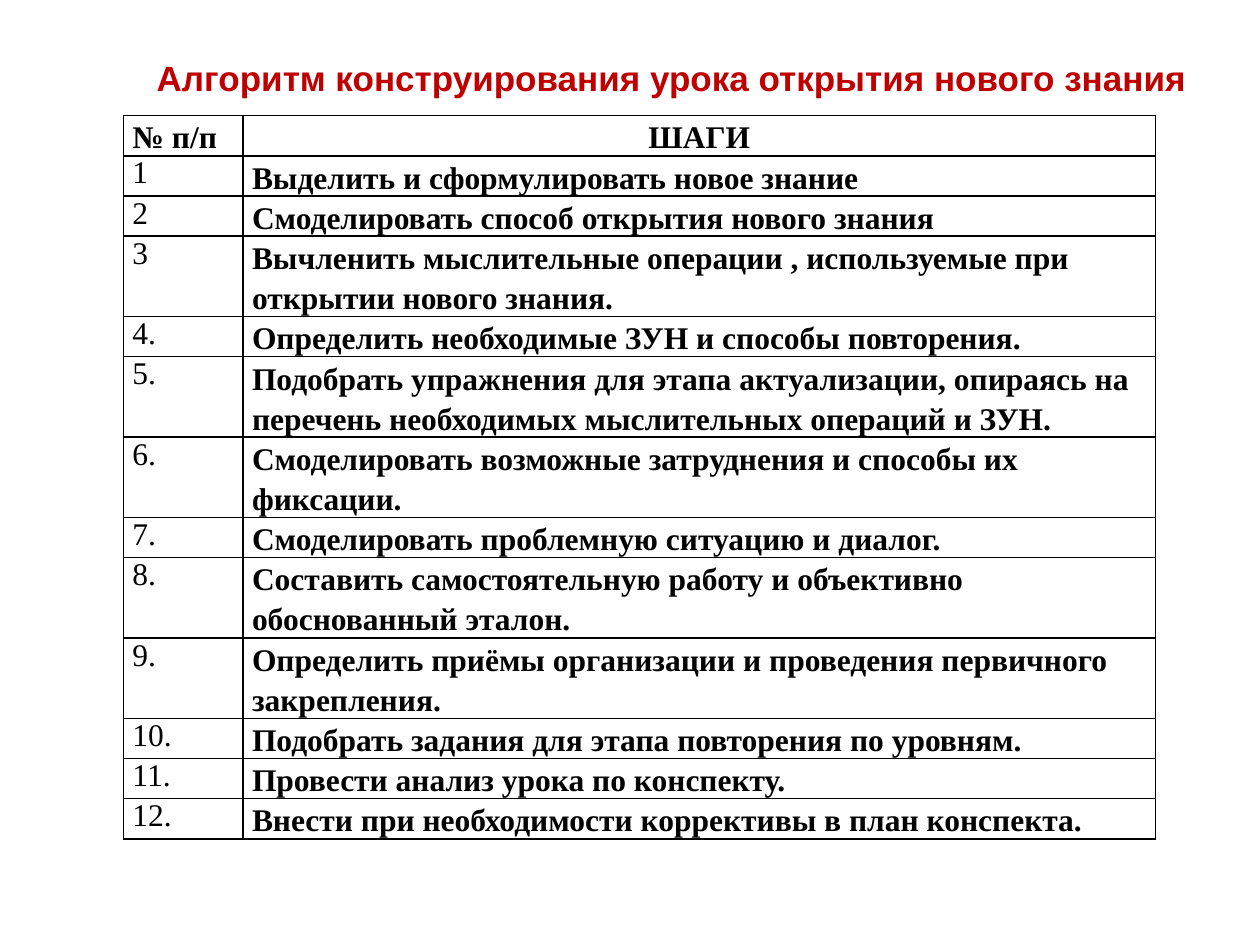
from typing import NamedTuple

from lxml import etree
from pptx import Presentation
from pptx import util as u
from pptx.dml.color import RGBColor
from pptx.enum import text
from pptx.oxml import ns

COLORS = {"title": "C00000", "ink": "000000"}
LINE_HEIGHT = 0.81
COLUMN_WIDTHS = (2.41, 18.39)
HANGING_INDENT = u.Cm(0.97)


class Step(NamedTuple):
    number: str
    action: str
    lines: int = 1


STEPS = [
    Step("1", "Выделить и сформулировать новое знание"),
    Step("2", "Смоделировать способ открытия нового знания"),
    Step("3", "Вычленить мыслительные операции , используемые при открытии нового знания.", 2),
    Step("4.", "Определить необходимые ЗУН и способы повторения."),
    Step("5.", "Подобрать упражнения для этапа актуализации, опираясь на перечень "
         "необходимых мыслительных операций и ЗУН.", 2),
    Step("6.", "Смоделировать возможные затруднения и способы их фиксации.", 2),
    Step("7.", "Смоделировать проблемную ситуацию и диалог."),
    Step("8.", "Составить самостоятельную работу и объективно обоснованный эталон.", 2),
    Step("9.", "Определить приёмы организации и проведения первичного закрепления.", 2),
    Step("10.", "Подобрать задания для этапа повторения по уровням."),
    Step("11.", "Провести анализ урока по конспекту."),
    Step("12.", "Внести при необходимости коррективы в план конспекта."),
]


def write_text(frame, content: str, *, font: str = "Times New Roman", size: float = 18,
               color: str = "ink", bold: bool = True, centered: bool = False,
               line_spacing: float = 1.0, hanging: bool = False) -> None:
    paragraph = frame.paragraphs[0]
    paragraph.alignment = text.PP_ALIGN.CENTER if centered else text.PP_ALIGN.LEFT
    paragraph.line_spacing = line_spacing
    if hanging:
        properties = paragraph._p.get_or_add_pPr()
        properties.set("marL", str(HANGING_INDENT))
        properties.set("indent", str(-HANGING_INDENT))
    run = paragraph.add_run()
    run.text = content
    run.font.name = font
    run.font.size = u.Pt(size)
    run.font.bold = bold
    run.font.color.rgb = RGBColor.from_string(COLORS[color])


def format_cell(cell) -> None:
    """Set margins, a 1 pt border on every side and no fill."""
    cell.margin_left = cell.margin_right = u.Cm(0.18)
    cell.margin_top = cell.margin_bottom = 0
    properties = cell._tc.get_or_add_tcPr()
    for side in ("a:lnL", "a:lnR", "a:lnT", "a:lnB"):
        line = etree.SubElement(properties, ns.qn(side), w=str(u.Pt(1)))
        fill = etree.SubElement(line, ns.qn("a:solidFill"))
        etree.SubElement(fill, ns.qn("a:srgbClr"), val=COLORS["ink"])
    cell.fill.background()


def add_title(slide) -> None:
    box = slide.shapes.add_textbox(u.Cm(2.49), u.Cm(1.32), u.Cm(22.1), u.Cm(1.58))
    frame = box.text_frame
    frame.word_wrap = True
    frame.vertical_anchor = text.MSO_ANCHOR.BOTTOM
    frame.margin_top = 0
    frame.margin_bottom = u.Cm(0.99)
    write_text(frame, "Алгоритм конструирования урока открытия нового знания",
               font="Arial", size=20, color="title", centered=True)


def add_steps_table(slide, steps: list[Step]) -> None:
    rows = [Step("№ п/п", "ШАГИ"), *steps]
    height = LINE_HEIGHT * sum(row.lines for row in rows)
    table = slide.shapes.add_table(len(rows), 2, u.Cm(2.49), u.Cm(2.33),
                                   u.Cm(sum(COLUMN_WIDTHS)), u.Cm(height)).table
    table.first_row = table.horz_banding = False
    for column, width in zip(table.columns, COLUMN_WIDTHS):
        column.width = u.Cm(width)
    for index, row in enumerate(rows):
        table.rows[index].height = u.Cm(LINE_HEIGHT * row.lines)
        number_cell, action_cell = table.cell(index, 0), table.cell(index, 1)
        format_cell(number_cell)
        format_cell(action_cell)
        header = index == 0
        write_text(number_cell.text_frame, row.number, bold=header, hanging=not header,
                   line_spacing=1.15 if header else 1.0)
        write_text(action_cell.text_frame, row.action, centered=header, line_spacing=1.15)


def main() -> None:
    presentation = Presentation()
    presentation.slide_width = u.Cm(25.4)
    presentation.slide_height = u.Cm(19.05)
    slide = presentation.slides.add_slide(presentation.slide_layouts[6])
    add_steps_table(slide, STEPS)
    add_title(slide)
    presentation.save("out.pptx")


if __name__ == "__main__":
    main()
